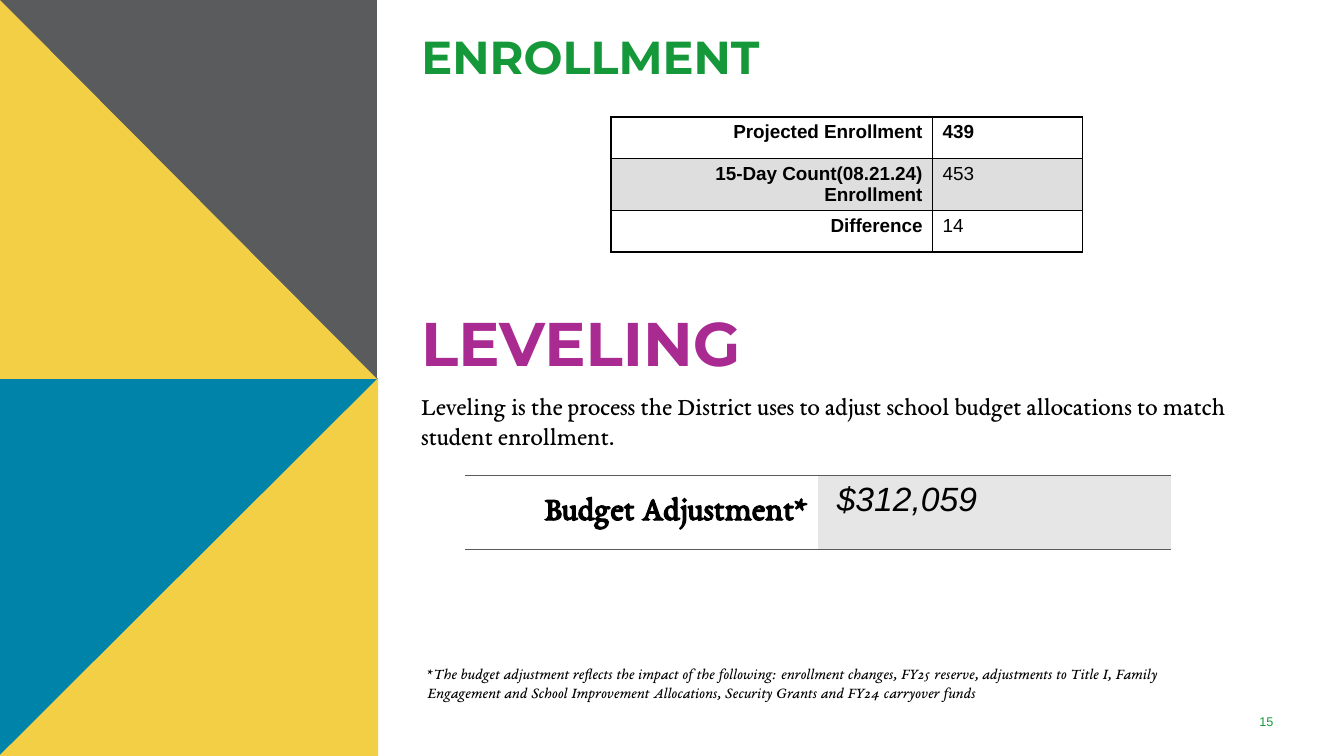
from lxml import etree
from pptx import Presentation
from pptx.dml.color import RGBColor
from pptx.enum import text
from pptx.oxml import ns
from pptx.util import Inches, Pt

GREEN = RGBColor(0x15, 0x98, 0x39)
PURPLE = RGBColor(0xA9, 0x2A, 0x91)
BLUE = RGBColor(0x00, 0x83, 0xA9)
YELLOW = RGBColor(0xF3, 0xCF, 0x45)
GRAY = RGBColor(0x59, 0x5B, 0x5D)
PALE_GRAY = RGBColor(0xDE, 0xDE, 0xDE)
LIGHT_GRAY = RGBColor(0xE7, 0xE6, 0xE6)
BLACK = RGBColor(0, 0, 0)

LEFT, RIGHT, CENTER = text.PP_ALIGN.LEFT, text.PP_ALIGN.RIGHT, text.PP_ALIGN.CENTER
TOP, MIDDLE = text.MSO_ANCHOR.TOP, text.MSO_ANCHOR.MIDDLE

PANELS = [
    (BLUE, [(0, 3.75), (3.75, 3.75), (3.75, 7.5), (0, 7.5)]),
    (YELLOW, [(3.75, 3.75), (3.75, 7.5), (0, 7.5), (0, 7.49)]),
    (GRAY, [(0, 0), (3.74, 0), (3.74, 3.76), (0, 3.76)]),
    (YELLOW, [(0, 0), (3.74, 3.76), (0, 3.76)]),
]
TITLE = ("ENROLLMENT", (4.08, 0.23, 7.4, 0.84),
         dict(size=33, font="Montserrat", color=GREEN, bold=True))
TEXTS = [
    ("LEVELING", (4.08, 2.98, 7.4, 0.84),
     dict(size=44, font="Montserrat", color=PURPLE, bold=True)),
    ("Leveling is the process the District uses to adjust school budget "
     "allocations to match student enrollment.", (4.08, 3.82, 8.26, 0.71),
     dict(size=18, font="EB Garamond")),
    ("*The budget adjustment reflects the impact of the following: enrollment changes, "
     "FY25 reserve, adjustments to Title I, Family Engagement and School Improvement "
     "Allocations, Security Grants and FY24 carryover funds", (4.14, 6.54, 7.94, 0.47),
     dict(size=11, font="EB Garamond", italic=True)),
    ("15", (12.02, 7.01, 1.08, 0.3),
     dict(size=9, font="Arial", color=GREEN, align=CENTER, anchor=MIDDLE)),
]
ENROLLMENT = [
    ("Projected Enrollment", "439"),
    ("15-Day Count(08.21.24) Enrollment", "453"),
    ("Difference", "14"),
]
BUDGET = ("Budget Adjustment*", "$312,059")


def style_text(frame, size, font, color=BLACK, bold=False, italic=False, align=LEFT):
    """Format every run in a text frame."""
    for para in frame.paragraphs:
        para.alignment = align
        for span in para.runs:
            span.font.size = Pt(size)
            span.font.name = font
            span.font.color.rgb = color
            span.font.bold = bold
            span.font.italic = italic


def fill_box(box, words, anchor=TOP, **style):
    """Write styled, wrapped text into a box."""
    frame = box.text_frame
    frame.text = words
    frame.word_wrap = True
    frame.auto_size = text.MSO_AUTO_SIZE.NONE
    frame.vertical_anchor = anchor
    style_text(frame, **style)


def add_panel(page, color, points):
    """Draw one flat polygon of the left-hand pattern."""
    corners = [(Inches(x), Inches(y)) for x, y in points]
    builder = page.shapes.build_freeform(*corners[0])
    builder.add_line_segments(corners[1:], close=True)
    panel = builder.convert_to_shape()
    panel.shadow.inherit = False
    panel.fill.solid()
    panel.fill.fore_color.rgb = color
    panel.line.fill.background()


def add_grid(page, left, top, widths, heights):
    """Add a plain table with the given column widths and row heights."""
    frame = page.shapes.add_table(
        len(heights), len(widths), Inches(left), Inches(top),
        Inches(sum(widths)), Inches(sum(heights)))
    grid = frame.table
    grid.first_row = grid.horz_banding = False
    for column, width in zip(grid.columns, widths):
        column.width = Inches(width)
    for row, height in zip(grid.rows, heights):
        row.height = Inches(height)
    return grid


def fill_cell(cell, words, edges, line, fill=None, anchor=TOP, **style):
    """Set the text, borders and fill of one cell."""
    cell.text = words
    cell.vertical_anchor = anchor
    style_text(cell.text_frame, **style)
    properties = cell._tc.get_or_add_tcPr()
    for edge in "LRTB":
        border = etree.SubElement(properties, ns.qn(f"a:ln{edge}"), w=str(Pt(1)))
        if edge in edges:
            solid = etree.SubElement(border, ns.qn("a:solidFill"))
            etree.SubElement(solid, ns.qn("a:srgbClr"), val=str(line))
        else:
            etree.SubElement(border, ns.qn("a:noFill"))
    if fill is None:
        cell.fill.background()
    else:
        cell.fill.solid()
        cell.fill.fore_color.rgb = fill


def main():
    """Build the enrollment and leveling slide."""
    deck = Presentation()
    deck.slide_width, deck.slide_height = Inches(13.33), Inches(7.5)
    page = deck.slides.add_slide(deck.slide_layouts[5])

    for color, points in PANELS:
        add_panel(page, color, points)

    words, place, style = TITLE
    title = page.shapes.title
    title.left, title.top, title.width, title.height = map(Inches, place)
    fill_box(title, words, **style)
    for words, place, style in TEXTS:
        fill_box(page.shapes.add_textbox(*map(Inches, place)), words, **style)

    counts = add_grid(page, 6.06, 1.16, (3.19, 1.49), (0.41, 0.52, 0.41))
    for row, (label, value) in enumerate(ENROLLMENT):
        shared = dict(edges="LRTB", line=BLACK, size=13.5, font="Arial",
                      fill=PALE_GRAY if row == 1 else None)
        fill_cell(counts.cell(row, 0), label, bold=True, align=RIGHT, **shared)
        fill_cell(counts.cell(row, 1), value, bold=row == 0, **shared)

    budget = add_grid(page, 4.61, 4.72, (3.5, 3.5), (0.73,))
    label, value = BUDGET
    shared = dict(edges="TB", line=GRAY, size=24)
    fill_cell(budget.cell(0, 0), label, font="EB Garamond", bold=True,
              align=RIGHT, anchor=MIDDLE, **shared)
    amount = budget.cell(0, 1)
    fill_cell(amount, value, font="Arial", italic=True, fill=LIGHT_GRAY, **shared)
    amount.margin_left = Inches(0.19)

    deck.save("out.pptx")


if __name__ == "__main__":
    main()
